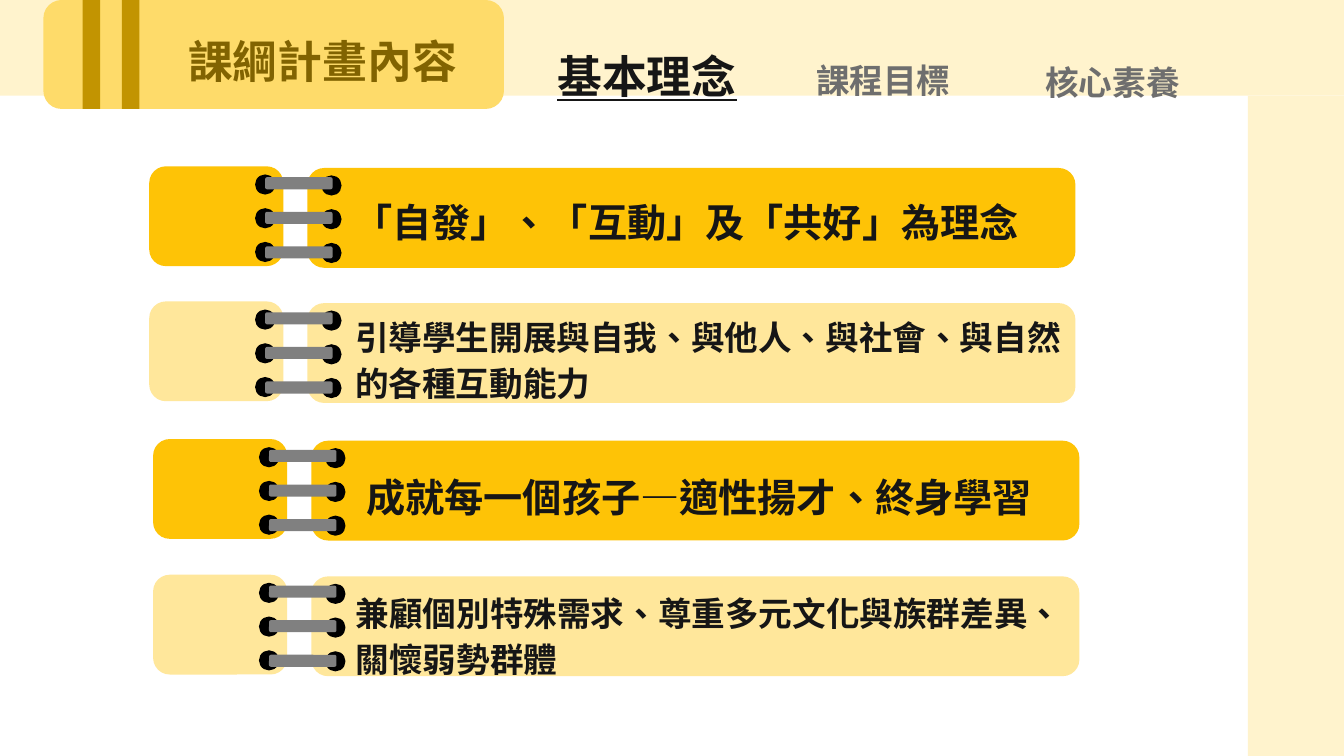
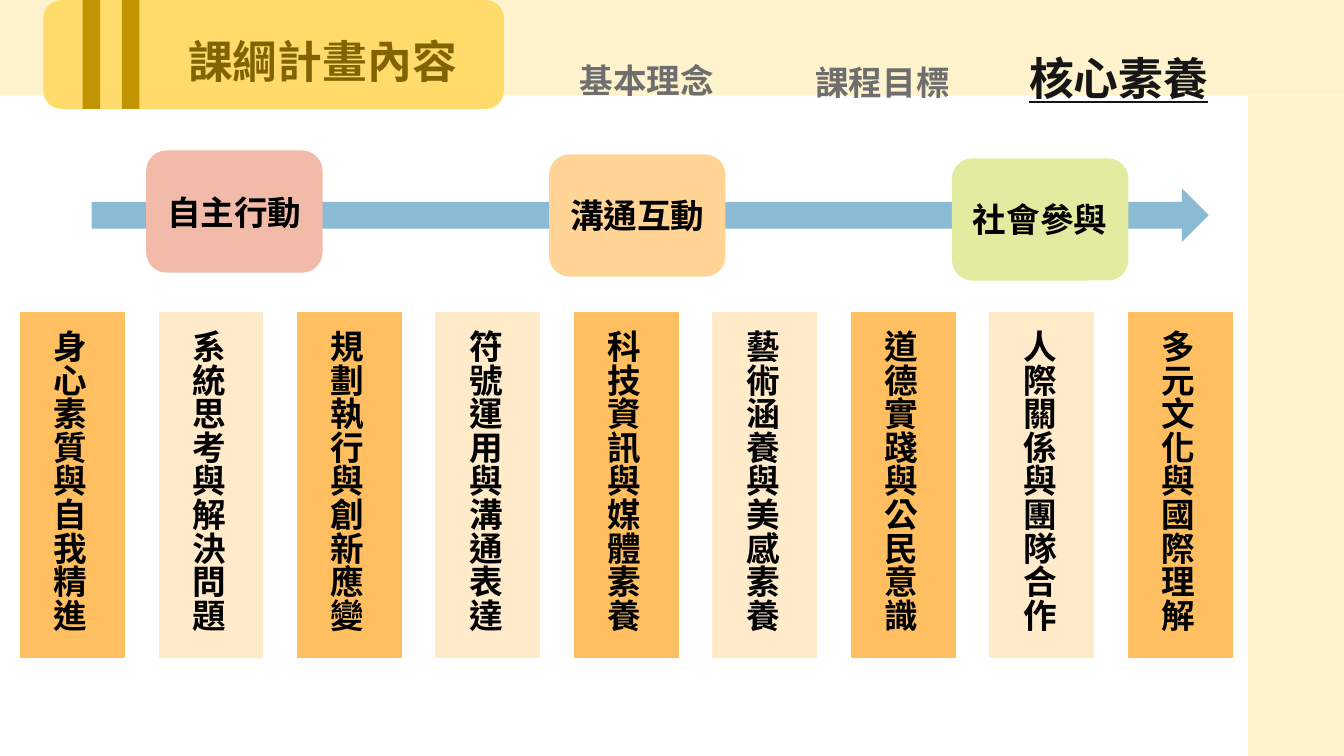
from lxml import etree
from pptx import Presentation
from pptx.dml.color import RGBColor
from pptx.enum.lang import MSO_LANGUAGE_ID
from pptx.enum.shapes import MSO_SHAPE
from pptx.enum.text import MSO_ANCHOR, PP_ALIGN
from pptx.oxml.ns import qn
from pptx.util import Pt

RECT, ROUND = MSO_SHAPE.RECTANGLE, MSO_SHAPE.ROUNDED_RECTANGLE
OVAL, ARROW = MSO_SHAPE.OVAL, MSO_SHAPE.RIGHT_ARROW
PROCESS = MSO_SHAPE.FLOWCHART_PROCESS
LEFT, CENTER = PP_ALIGN.LEFT, PP_ALIGN.CENTER
MIDDLE, TOP = MSO_ANCHOR.MIDDLE, MSO_ANCHOR.TOP
TAIWAN = MSO_LANGUAGE_ID.TRADITIONAL_CHINESE

FONT = "Noto Sans CJK SC"
CREAM, BADGE, STRIPE, TITLE = "FFF3CD", "FEDB6A", "C29401", "816301"
INK, MUTED, BLACK, RING = "161616", "6E6E6E", "000000", "808080"
GOLD, PALE_GOLD = "FEC306", "FFE79B"
ORANGE, PEACH, BLUE = "FFBF61", "FFEACA", "8ABAD4"
TOPICS = ["基本理念", "課程目標", "核心素養"]


def rgb(color):
    return RGBColor.from_string(color)


class Deck:
    """Holds the shared style and the slide being built."""

    def __init__(self):
        self.prs = Presentation()
        self.prs.slide_width, self.prs.slide_height = Pt(960), Pt(540)
        self.slide = None

    def block(self, kind, left, top, width, height, color):
        block = self.slide.shapes.add_shape(
            kind, Pt(left), Pt(top), Pt(width), Pt(height))
        block.shadow.inherit = False
        block.fill.solid()
        block.fill.fore_color.rgb = rgb(color)
        block.line.fill.background()
        return block

    def fill_text(self, frame, lines, color, size=24, align=CENTER,
                  spacing=1.15, underline=None):
        run_format = {"name": FONT, "size": Pt(size), "bold": True,
                      "underline": underline, "language_id": TAIWAN}
        for number, line in enumerate(lines):
            paragraph = frame.add_paragraph() if number else frame.paragraphs[0]
            paragraph.alignment = align
            paragraph.line_spacing = spacing
            run = paragraph.add_run()
            run.text = line
            for name, value in run_format.items():
                setattr(run.font, name, value)
            run.font.color.rgb = rgb(color)
            latin = run.font._element.find(qn("a:latin"))
            east_asian = etree.Element(qn("a:ea"), typeface=FONT)
            latin.addnext(east_asian)

    def text(self, left, top, width, height, lines, color, wrap=True, **style):
        frame = self.slide.shapes.add_textbox(
            Pt(left), Pt(top), Pt(width), Pt(height)).text_frame
        frame.word_wrap = wrap
        frame.vertical_anchor = TOP
        self.fill_text(frame, lines, color, **style)

    def tab(self, topic, center, top, active):
        width, height, size = (144, 48.2, 32) if active else (111.6, 38.2, 24)
        self.text(center - width / 2, top, width, height, [topic],
                  INK if active else MUTED, wrap=False, size=size,
                  underline=active or None)

    def new_slide(self, active, tab_places):
        self.slide = self.prs.slides.add_slide(self.prs.slide_layouts[6])
        # Bands along the top and right edges
        self.block(RECT, 0, 0, 960, 68.4, CREAM)
        self.block(RECT, 891.4, 68.4, 68.6, 471.6, CREAM)
        # Title badge with two stripes
        self.block(ROUND, 31, 0, 329, 77.8, BADGE)
        self.text(106.6, 15.1, 247.7, 48.2, ["課綱計畫內容"], TITLE, size=32)
        for stripe_left in (59, 87.1):
            self.block(RECT, stripe_left, 0, 12.5, 77.8, STRIPE)
        # Topic tabs
        for topic, (center, top) in zip(TOPICS, tab_places):
            self.tab(topic, center, top, topic == active)

    def ring_card(self, left, top, color):
        self.block(ROUND, left + 113, top + 1.2, 548.6, 71.3, color)
        self.block(ROUND, left, top, 95.8, 71.3, color)
        for hole_left, hole_top in ((75.6, 5.8), (123, 6.5)):
            for row in range(3):
                self.block(OVAL, left + hole_left, top + hole_top + 24.1 * row,
                           14.4, 14.4, BLACK)
        for row in range(3):
            self.block(ROUND, left + 82.8, top + 7.8 + 24.7 * row,
                       48.2, 8.6, RING)

    def domain(self, left, top, label, color):
        frame = self.block(ROUND, left, top, 126, 87.3, color).text_frame
        frame.vertical_anchor = MIDDLE
        self.fill_text(frame, [label], BLACK, spacing=1.0)

    def pillar(self, left, label, color):
        frame = self.block(PROCESS, left, 222.6, 74.9, 247.5, color).text_frame
        frame.vertical_anchor = MIDDLE
        frame._txBody.bodyPr.set("vert", "eaVert")
        self.fill_text(frame, [label], BLACK, align=LEFT)
        properties = frame.paragraphs[0]._p.get_or_add_pPr()
        for name, value in {"marL": Pt(24), "indent": Pt(-18)}.items():
            properties.set(name, str(int(value)))


def build_ideas(deck):
    deck.new_slide("基本理念", [(462.2, 25.2), (631, 35.3), (794.6, 36.7)])
    # Headline cards alternate with detail cards: card place, text place, lines
    cards = [
        (106.6, 118.8, 202.3, 133.2, ["「自發」、「互動」及「共好」為理念"]),
        (106.6, 215.3, 246.5, 218.2,
         ["引導學生開展與自我、與他人、與社會、與自然", "的各種互動能力"]),
        (109.4, 313.6, 211.7, 329.8, ["成就每一個孩子—適性揚才、終身學習"]),
        (109.4, 410.5, 247, 415.4,
         ["兼顧個別特殊需求、尊重多元文化與族群差異、", "關懷弱勢群體"]),
    ]
    for left, top, text_left, text_top, lines in cards:
        headline = len(lines) == 1
        deck.ring_card(left, top, GOLD if headline else PALE_GOLD)
        deck.text(text_left, text_top, 575.3, 43.2 if headline else 71.3,
                  lines, INK, size=28 if headline else 24,
                  align=CENTER if headline else LEFT)


def build_competencies(deck):
    deck.new_slide("核心素養", [(461.9, 35.3), (630.4, 36.7), (799.2, 26.6)])
    # Three domains along an arrow
    deck.block(ARROW, 65.5, 134.6, 797.8, 38.2, BLUE)
    domains = [("自主行動", "F2BAA9"), ("溝通互動", "FFD495"),
               ("社會參與", "E2EBA0")]
    for place, (label, color) in enumerate(domains):
        deck.domain(104.4 + 287.8 * place, 107.5 + 2.8 * place, label, color)
    # Nine competencies in upright pillars
    competencies = [
        "身心素質與自我精進", "系統思考與解決問題", "規劃執行與創新應變",
        "符號運用與溝通表達", "科技資訊與媒體素養", "藝術涵養與美感素養",
        "道德實踐與公民意識", "人際關係與團隊合作", "多元文化與國際理解",
    ]
    for place, label in enumerate(competencies):
        deck.pillar(14.4 + 98.9 * place, label, PEACH if place % 2 else ORANGE)


def main():
    deck = Deck()
    build_ideas(deck)
    build_competencies(deck)
    deck.prs.save("out.pptx")


if __name__ == "__main__":
    main()
